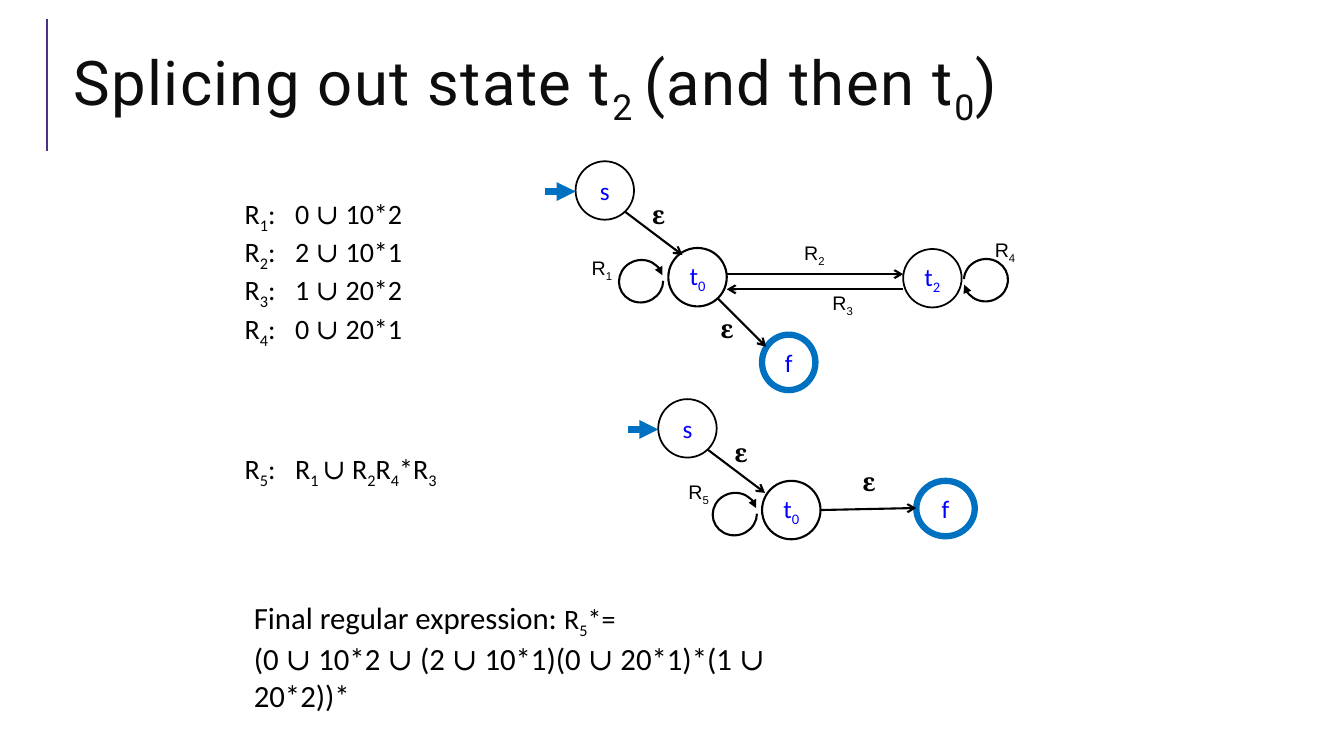
from itertools import groupby

from lxml import etree
from pptx import Presentation
from pptx.dml.color import RGBColor
from pptx.enum.shapes import MSO_CONNECTOR, MSO_SHAPE
from pptx.enum.text import MSO_ANCHOR, MSO_AUTO_SIZE, PP_ALIGN
from pptx.oxml.ns import qn
from pptx.util import Inches, Pt

STRAIGHT = MSO_CONNECTOR.STRAIGHT
OVAL, ARC = MSO_SHAPE.OVAL, MSO_SHAPE.ARC
MIDDLE, TOP = MSO_ANCHOR.MIDDLE, MSO_ANCHOR.TOP
LEFT, CENTER = PP_ALIGN.LEFT, PP_ALIGN.CENTER
NO_FIT, GROW = MSO_AUTO_SIZE.NONE, MSO_AUTO_SIZE.SHAPE_TO_FIT_TEXT

# All lengths are columns and rows of a 0.1 inch grid
CELL = Inches(0.1)
COLS, ROWS = 133.33, 75
STATE = 5.8  # diameter of a state

BLACK, BLUE, INK, PURPLE, TITLE = "000000", "0070C0", "0000FF", "4C3282", "0D0D0D"


def grid(*cells):
    return [round(c * CELL) for c in cells]


def rgb(value):
    return RGBColor.from_string(value)


def write(p, text, size=18, font="Calibri", color=BLACK, bold=False,
          align=LEFT, spacing=0):
    """Add text to a paragraph; underscores enclose a subscript."""
    p.alignment = align
    for i, part in enumerate(text.split("_")):
        for is_union, chars in groupby(part, lambda c: c == "∪"):
            r = p.add_run()
            r.text = "".join(chars)
            r.font.size, r.font.bold = Pt(size), bold
            r.font.name = "Cambria" if is_union else font
            r.font.color.rgb = rgb(color)
            props = r.font._element
            if i % 2:
                props.set("baseline", "-25000")
            if spacing:
                props.set("spc", str(spacing * 100))


def text_box(slide, x, y, w, h, wrap=False):
    sp = slide.shapes.add_textbox(*grid(x, y, w, h))
    tf = sp.text_frame
    tf.word_wrap, tf.auto_size, tf.vertical_anchor = wrap, GROW, TOP
    return tf


def label(slide, text, x, y):
    write(text_box(slide, x, y, 4.2, 3.4).paragraphs[0], text, size=14, font="Arial")


def epsilon(slide, x, y):
    write(text_box(slide, x, y, 3.2, 4).paragraphs[0], "ɛ", font="Cambria", bold=True)


def set_line(sp, color, width, tail=None):
    sp.line.color.rgb = rgb(color)
    sp.line.width = Pt(width)
    if tail:
        etree.SubElement(sp.line._get_or_add_ln(), qn("a:tailEnd"), type=tail)


def line(slide, x1, y1, x2, y2, color=BLACK, width=1.5, tail="arrow"):
    cxn = slide.shapes.add_connector(STRAIGHT, *grid(x1, y1, x2, y2))
    set_line(cxn, color, width, tail)
    etree.SubElement(cxn._element.spPr, qn("a:effectLst"))


def outline(slide, kind, x, y, w, h, color=BLACK, width=1.5, tail=None):
    sp = slide.shapes.add_shape(kind, *grid(x, y, w, h))
    sp.shadow.inherit = False
    sp.fill.background()
    set_line(sp, color, width, tail)
    return sp


def state(slide, name, x, y, w=STATE, h=STATE, **line_format):
    sp = outline(slide, OVAL, x, y, w, h, **line_format)
    tf = sp.text_frame
    tf.word_wrap, tf.vertical_anchor = False, MIDDLE
    write(tf.paragraphs[0], name, color=INK, align=CENTER)


def final_state(slide, x, y, w, h):
    state(slide, "f", x, y, w, h, color=BLUE, width=4.5)


def loop(slide, x, y, rotation):
    sp = outline(slide, ARC, x, y, 4.4, 4.2, tail="triangle")
    sp.adjustments[0], sp.adjustments[1] = 8.72, 0
    sp.rotation = rotation


def start_state(slide, x, y):
    """Start state with its entry arrow and its edge to the next state."""
    state(slide, "s", x, y, width=1.25)
    line(slide, x - 3, y + 3, x, y + 3, color=BLUE, width=4.5, tail="triangle")
    line(slide, x + 4.9, y + 5, x + 10.6, y + 9.3)
    epsilon(slide, x + 6.6, y + 3.3)


def looped_state(slide, x, y):
    state(slide, "t_0_", x, y)
    loop(slide, x - 4.9, y + 1.2, 344.4)


def title(slide):
    line(slide, 4.7, 15, 4.7, 1.9, color=PURPLE, tail=None)
    sp = slide.shapes.title
    sp.left, sp.top, sp.width, sp.height = grid(6.3, 2.9, 122.3, 11.1)
    tf = sp.text_frame
    tf.word_wrap, tf.auto_size, tf.vertical_anchor = True, NO_FIT, MIDDLE
    p = tf.paragraphs[0]
    p.line_spacing = 0.8
    write(p, "Splicing out state t_2 _(and then t_0_)", size=44, font="Roboto",
          color=TITLE, spacing=1)


def definitions(slide):
    tf = text_box(slide, 23.3, 19, 28, 34.7, wrap=True)
    rules = ["0 ∪ 10*2", "2 ∪ 10*1", "1 ∪ 20*2", "0 ∪ 20*1",
             "R_1 _∪ R_2_R_4_*R_3_"]
    for i, rule in enumerate(rules, 1):
        p = tf.paragraphs[0] if i == 1 else tf.add_paragraph()
        if i == len(rules):
            p.space_before = Pt(73)
        write(p, f"R_{i}_:\t{rule}", size=20)
        tabs = etree.SubElement(p._p.get_or_add_pPr(), qn("a:tabLst"))
        etree.SubElement(tabs, qn("a:tab"), pos=str(5 * CELL), algn="l")


def result(slide):
    tf = text_box(slide, 24.2, 58.9, 60, 12.5, wrap=True)
    p = tf.paragraphs[0]
    write(p, "Final regular expression: ", size=22)
    write(p, "R_5_*=", size=20)
    write(tf.add_paragraph(), "(0 ∪ 10*2 ∪ (2 ∪ 10*1)(0 ∪ 20*1)*(1 ∪ 20*2))*", size=22)


def main():
    prs = Presentation()
    prs.slide_width, prs.slide_height = grid(COLS, ROWS)
    slide = prs.slides.add_slide(prs.slide_layouts[5])

    title(slide)
    definitions(slide)
    result(slide)

    # Automaton before t2 is removed
    start_state(slide, 57.1, 16)
    looped_state(slide, 66.3, 24.6)
    state(slide, "t_2_", 89.6, 24.7, width=1.25)
    loop(slide, 95.6, 25.7, 168.5)
    line(slide, 72.1, 27.2, 89.6, 27.2)
    line(slide, 89.6, 28.7, 72.1, 28.7)
    final_state(slide, 75.6, 33.2, 5.3, 5.5)
    line(slide, 71.2, 29.6, 76, 34.4)
    epsilon(slide, 70.5, 30.6)
    for name, x, y in [("R_1_", 57.7, 24.9), ("R_2_", 78.8, 23.4),
                       ("R_3_", 81.6, 28.4), ("R_4_", 97.7, 23.1)]:
        label(slide, name, x, y)

    # Automaton after t2 is removed
    start_state(slide, 65.3, 39.6)
    looped_state(slide, 75.6, 47.7)
    label(slide, "R_5_", 67.3, 47.1)
    final_state(slide, 90.9, 47.7, 5.8, 5.5)
    line(slide, 81.4, 50.6, 90.9, 50.4)
    epsilon(slide, 84.6, 45.8)

    prs.save("out.pptx")


if __name__ == "__main__":
    main()
